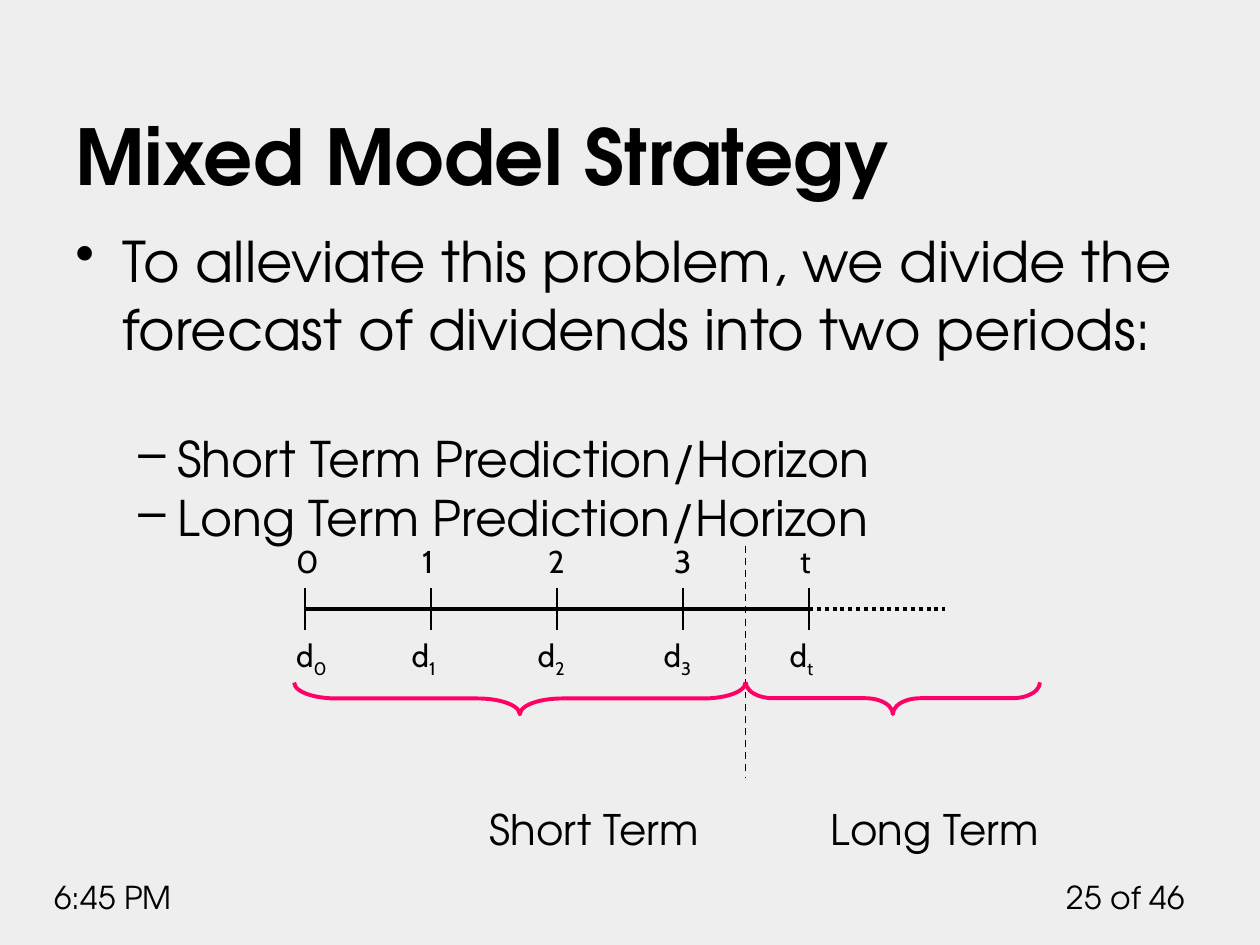
from dataclasses import dataclass

from lxml.etree import SubElement as Sub
from pptx import Presentation
from pptx.dml.color import RGBColor as Rgb
from pptx.enum.dml import MSO_LINE as Dash
from pptx.enum.shapes import MSO_CONNECTOR as Conn, MSO_SHAPE as Kind
from pptx.enum.text import MSO_ANCHOR as Anchor, PP_ALIGN as Align
from pptx.oxml.ns import qn
from pptx.util import Cm, Pt

HEX = {"page": "EEEEEE", "ink": "000000", "brace": "FF0066"}
MAIN, SMALL = "TeX Gyre Adventor", "Cabin"


@dataclass
class Label:
    text: str
    x: float
    y: float
    w: float
    h: float
    size: float = 18
    face: str = MAIN
    bold: bool = False
    align: Align = Align.LEFT
    anchor: Anchor = Anchor.TOP
    sub: str = ""


@dataclass
class Rule:
    x: float
    y: float
    x2: float
    y2: float
    width: float = 1
    dash: Dash | None = None


@dataclass
class Brace:
    x: float
    y: float
    w: float
    h: float
    bend: float


@dataclass
class Item:
    text: str
    mark: str
    size: float
    left: float
    hang: float
    before: float = 0


def style(font, **form) -> None:
    for key, val in form.items():
        setattr(font, key, val)
    font.color.rgb = Rgb.from_string(HEX["ink"])


def frame(page, x: float, y: float, w: float, h: float):
    box = page.shapes.add_textbox(Cm(x), Cm(y), Cm(w), Cm(h))
    box.text_frame.word_wrap = True
    return box.text_frame


def write(page, lab: Label) -> None:
    body = frame(page, lab.x, lab.y, lab.w, lab.h)
    body.vertical_anchor = lab.anchor
    para = body.paragraphs[0]
    para.alignment = lab.align
    for text, low in ((lab.text, False), (lab.sub, True)):
        if text:
            run = para.add_run()
            run.text = text
            style(run.font, name=lab.face, size=Pt(lab.size), bold=lab.bold)
            if low:
                run.font._element.set("baseline", "-25000")


def rule(page, r: Rule) -> None:
    line = page.shapes.add_connector(
        Conn.STRAIGHT, Cm(r.x), Cm(r.y), Cm(r.x2), Cm(r.y2))
    line.line.color.rgb = Rgb.from_string(HEX["ink"])
    line.line.width = Pt(r.width)
    if r.dash is not None:
        line.line.dash_style = r.dash
    Sub(line._element.spPr, qn("a:effectLst"))


def brace(page, b: Brace) -> None:
    shape = page.shapes.add_shape(
        Kind.LEFT_BRACE, Cm(b.x), Cm(b.y), Cm(b.w), Cm(b.h))
    shape.rotation = 270
    shape.adjustments[0] = b.bend
    shape.shadow.inherit = False
    shape.fill.background()
    shape.line.color.rgb = Rgb.from_string(HEX["brace"])
    shape.line.width = Pt(2.25)


def bullets(body, items: list[Item]) -> None:
    for i, item in enumerate(items):
        para = body.add_paragraph() if i else body.paragraphs[0]
        prop = para._p.get_or_add_pPr()
        prop.set("marL", str(Cm(item.left)))
        prop.set("indent", str(-Cm(item.hang)))
        if item.before:
            para.space_before = Pt(item.before)
        Sub(prop, qn("a:buChar"), char=item.mark)
        run = para.add_run()
        run.text = item.text
        style(run.font, name=MAIN, size=Pt(item.size))


def main() -> None:
    deck = Presentation()
    deck.slide_width, deck.slide_height = Cm(25.4), Cm(19.05)
    page = deck.slides.add_slide(deck.slide_layouts[6])
    page.background.fill.solid()
    page.background.fill.fore_color.rgb = Rgb.from_string(HEX["page"])

    # Footer, title and period names
    for lab in (
        Label("25 of 46", 21.17, 17.57, 2.96, 1.02, align=Align.RIGHT),
        Label("6:45 PM", 0.85, 17.57, 4.02, 1.02),
        Label("Mixed Model Strategy", 1.27, 0.99, 22.86, 3.18, 44,
              bold=True, anchor=Anchor.BOTTOM),
        Label("Short Term", 9.62, 16.08, 5.2, 1.27, 24),
        Label("Long Term", 16.5, 16.08, 5.2, 1.27, 24),
    ):
        write(page, lab)

    # Body text
    bullets(frame(page, 1.27, 4.45, 22.86, 7), [
        Item("To alleviate this problem, we divide the forecast of "
             "dividends into two periods:", "•", 32, 0.95, 0.95),
        Item("Short Term Prediction/Horizon", "–", 28, 2.06, 0.79, 38.4),
        Item("Long Term Prediction/Horizon", "–", 28, 2.06, 0.79),
    ])

    # Time axis, its dotted tail and the split between periods
    left, step, mid = 6.15, 2.54, 12.28
    end = left + 4 * step
    rule(page, Rule(left, mid, end, mid, 2.25))
    rule(page, Rule(end, mid, 19.05, mid, 2.25, Dash.ROUND_DOT))
    rule(page, Rule(15.03, 11, 15.03, 15.67, 1, Dash.DASH))

    # Ticks with period above and dividend below
    for i, name in enumerate("0123t"):
        x = left + i * step
        rule(page, Rule(x, 11.86, x, 12.7))
        write(page, Label(name, x - 0.43, 10.8, 0.85, 1.02, face=SMALL))
        shift = 0.64 if i else 0.43
        write(page, Label("d", x - shift, 12.7, 1.48, 1.02,
                          face=SMALL, sub=name))

    # Braces under the two periods
    brace(page, Brace(10.16, 9.53, 0.64, 9.1, 1.325))
    brace(page, Brace(17.68, 11.11, 0.64, 5.93, 0.863))

    deck.save("out.pptx")


if __name__ == "__main__":
    main()
